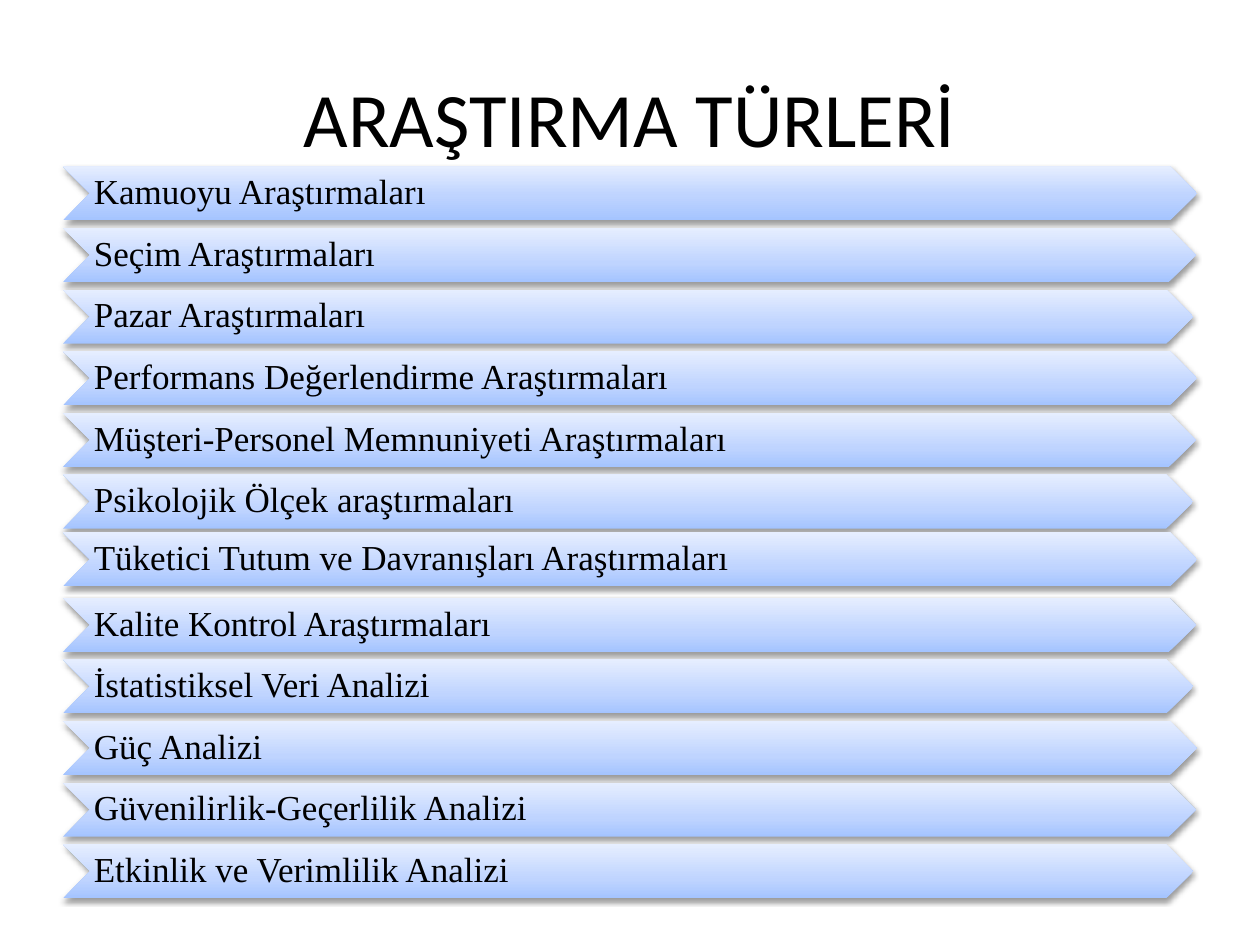
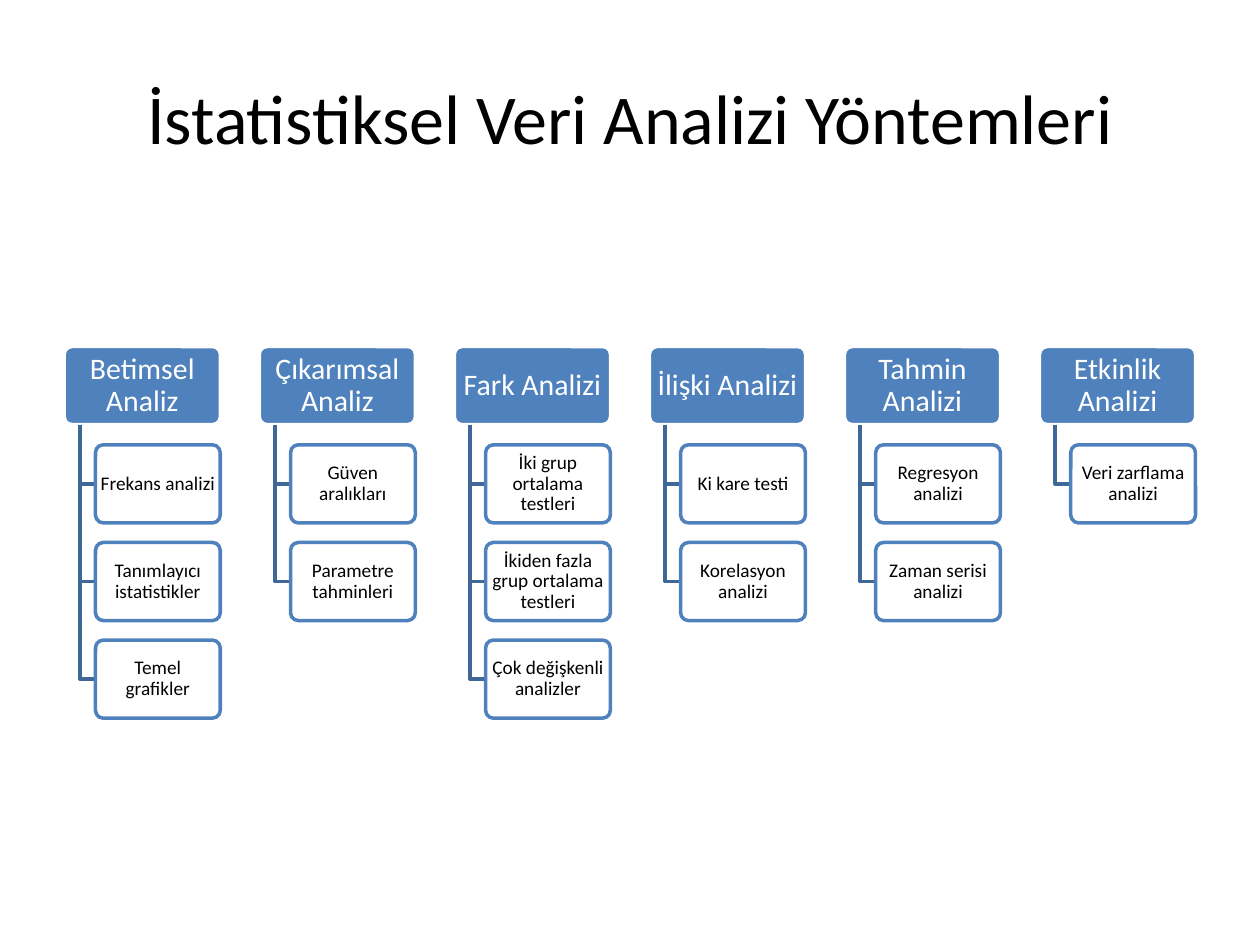
import lxml.etree
import pptx
import pptx.util
from pptx.dml.color import RGBColor
from pptx.enum.shapes import MSO_SHAPE
from pptx.enum.text import MSO_ANCHOR, PP_ALIGN
from pptx.oxml import parse_xml
from pptx.oxml.ns import nsdecls, qn
from pptx.util import Inches

BLACK, WHITE, BLUE, DARK_BLUE = "000000", "FFFFFF", "4F81BD", "3F6797"
BAND_COLOURS = ("A4C4FF", "BFD4FF", "E6EEFF")

RESEARCH_TITLE = "ARAŞTIRMA TÜRLERİ"
RESEARCH_TYPES = [
    "Kamuoyu Araştırmaları",
    "Seçim Araştırmaları",
    "Pazar Araştırmaları",
    "Performans Değerlendirme Araştırmaları",
    "Müşteri-Personel Memnuniyeti Araştırmaları",
    "Psikolojik Ölçek araştırmaları",
    "Tüketici Tutum ve Davranışları Araştırmaları",
    "Kalite Kontrol Araştırmaları",
    "İstatistiksel Veri Analizi",
    "Güç Analizi",
    "Güvenilirlik-Geçerlilik Analizi",
    "Etkinlik ve Verimlilik Analizi",
]
RAISED_TYPE = "Tüketici Tutum ve Davranışları Araştırmaları"
BAND_WIDTHS = (9, 8.99, 8.97)
BAND_LEFT, BAND_TOP, BAND_HEIGHT = 0.5, 1.32, 0.43
BAND_PITCH = (6.7 - BAND_TOP) / (len(RESEARCH_TYPES) - 1)

METHODS_TITLE = "İstatistiksel Veri Analizi Yöntemleri"
METHODS = {
    "Betimsel Analiz": ["Frekans analizi", "Tanımlayıcı istatistikler", "Temel grafikler"],
    "Çıkarımsal Analiz": ["Güven aralıkları", "Parametre tahminleri"],
    "Fark Analizi": ["İki grup ortalama testleri", "İkiden fazla grup ortalama testleri",
                     "Çok değişkenli analizler"],
    "İlişki Analizi": ["Ki kare testi", "Korelasyon analizi"],
    "Tahmin Analizi": ["Regresyon analizi", "Zaman serisi analizi"],
    "Etkinlik Analizi": ["Veri zarflama analizi"],
}
METHOD_LEFT, METHOD_TOP, METHOD_WIDTH, BOX_HEIGHT = 0.51, 2.75, 1.24, 0.62
METHOD_PITCH = (8.25 - METHOD_LEFT) / (len(METHODS) - 1)
TECHNIQUE_TOP, TECHNIQUE_WIDTH = 3.53, 0.99
TECHNIQUE_PITCH = BOX_HEIGHT * 1.25
TRUNK_INDENT = METHOD_WIDTH / 10


def colour(value):
    """Turn a hex string into a colour."""
    return RGBColor.from_string(value)


def add_titled_slide(deck, text, size):
    """Add a title-only slide with its title set."""
    slide = deck.slides.add_slide(deck.slide_layouts[5])
    title = slide.shapes.title
    title.left, title.top, title.width, title.height = map(Inches, (0.5, 0.3, 9, 1.25))
    title.text_frame.vertical_anchor = MSO_ANCHOR.MIDDLE
    write(title, text, size, "Calibri", BLACK, PP_ALIGN.CENTER)
    return slide


def write(shape, text, size, font_name, text_colour, alignment):
    """Write one formatted paragraph in a shape."""
    shape.text_frame.text = text
    paragraph = shape.text_frame.paragraphs[0]
    paragraph.alignment = alignment
    paragraph.font.size = pptx.util.Pt(size)
    paragraph.font.name = font_name
    paragraph.font.color.rgb = colour(text_colour)
    return paragraph


def add_label(slide, preset, place, text, size, font_name, text_colour, alignment, insets):
    """Add a preset shape that holds a tightly set label."""
    shape = slide.shapes.add_shape(preset, *map(Inches, place))
    shape.shadow.inherit = False
    frame = shape.text_frame
    frame.word_wrap = True
    frame.vertical_anchor = MSO_ANCHOR.MIDDLE
    frame.margin_left, frame.margin_top, frame.margin_right, frame.margin_bottom = map(Inches, insets)
    write(shape, text, size, font_name, text_colour, alignment).line_spacing = 0.9
    return shape


def add_band(slide, index, text):
    """Add one shaded chevron of the list."""
    top = BAND_TOP + index * BAND_PITCH - (0.03 if text == RAISED_TYPE else 0)
    place = (BAND_LEFT, top, BAND_WIDTHS[index % len(BAND_WIDTHS)], BAND_HEIGHT)
    band = add_label(slide, MSO_SHAPE.CHEVRON, place, text, 20, "Times New Roman",
                     BLACK, PP_ALIGN.LEFT, (0.03, 0.01, 0, 0.01))
    band.line.fill.background()
    band.fill.background()
    middle = 35 if index else 47
    stops = "".join(f'<a:gs pos="{position * 1000}"><a:srgbClr val="{value}"/></a:gs>'
                    for position, value in zip((0, middle, 100), BAND_COLOURS))
    properties = band._element.spPr
    properties.replace(properties.find(qn("a:noFill")), parse_xml(
        f'<a:gradFill {nsdecls("a")} rotWithShape="1"><a:gsLst>{stops}</a:gsLst>'
        '<a:lin ang="16200000" scaled="0"/></a:gradFill>'))
    properties.find(qn("a:effectLst")).append(parse_xml(
        f'<a:outerShdw {nsdecls("a")} blurRad="40000" dist="20000" dir="5400000" rotWithShape="0">'
        '<a:srgbClr val="000000"><a:alpha val="38000"/></a:srgbClr></a:outerShdw>'))


def add_box(slide, place, text, size, text_colour, fill_colour, line_colour, side_inset):
    """Add one rounded box of the hierarchy."""
    box = add_label(slide, MSO_SHAPE.ROUNDED_RECTANGLE, place, text, size, "Calibri",
                    text_colour, PP_ALIGN.CENTER, (side_inset, 0.02, side_inset, 0.02))
    box.adjustments[0] = 0.1
    box.fill.solid()
    box.fill.fore_color.rgb = colour(fill_colour)
    box.line.color.rgb = colour(line_colour)
    box.line.width = pptx.util.Pt(2)
    return box


def add_branch(slide, trunk, top, end, middle):
    """Draw the bent line from a method to a technique."""
    builder = slide.shapes.build_freeform(Inches(trunk), Inches(top))
    builder.add_line_segments([(Inches(trunk), Inches(middle)), (Inches(end), Inches(middle))],
                              close=False)
    branch = builder.convert_to_shape()
    branch.shadow.inherit = False
    branch.fill.background()
    branch.line.color.rgb = colour(DARK_BLUE)
    branch.line.width = pptx.util.Pt(2)


def add_method(slide, index, method, techniques):
    """Add a method with its techniques hanging below."""
    left = METHOD_LEFT + index * METHOD_PITCH
    trunk, technique_left = left + TRUNK_INDENT, left + 2 * TRUNK_INDENT
    add_box(slide, (left, METHOD_TOP, METHOD_WIDTH, BOX_HEIGHT), method, 17, WHITE, BLUE, WHITE, 0.04)
    for row, technique in enumerate(techniques):
        top = TECHNIQUE_TOP + row * TECHNIQUE_PITCH
        add_branch(slide, trunk, METHOD_TOP + BOX_HEIGHT, technique_left, top + BOX_HEIGHT / 2)
        box = add_box(slide, (technique_left, top, TECHNIQUE_WIDTH, BOX_HEIGHT), technique, 11,
                      BLACK, WHITE, BLUE, 0.02)
        fill = box._element.spPr.find(qn("a:solidFill"))
        lxml.etree.SubElement(fill[0], qn("a:alpha"), val="90000")


def main():
    """Build and save both slides."""
    deck = pptx.Presentation()
    deck.slide_width, deck.slide_height = Inches(10), Inches(7.5)
    research = add_titled_slide(deck, RESEARCH_TITLE, 44)
    for index, research_type in enumerate(RESEARCH_TYPES):
        add_band(research, index, research_type)
    analysis = add_titled_slide(deck, METHODS_TITLE, 40)
    for index, (method, techniques) in enumerate(METHODS.items()):
        add_method(analysis, index, method, techniques)
    deck.save("out.pptx")


if __name__ == "__main__":
    main()
